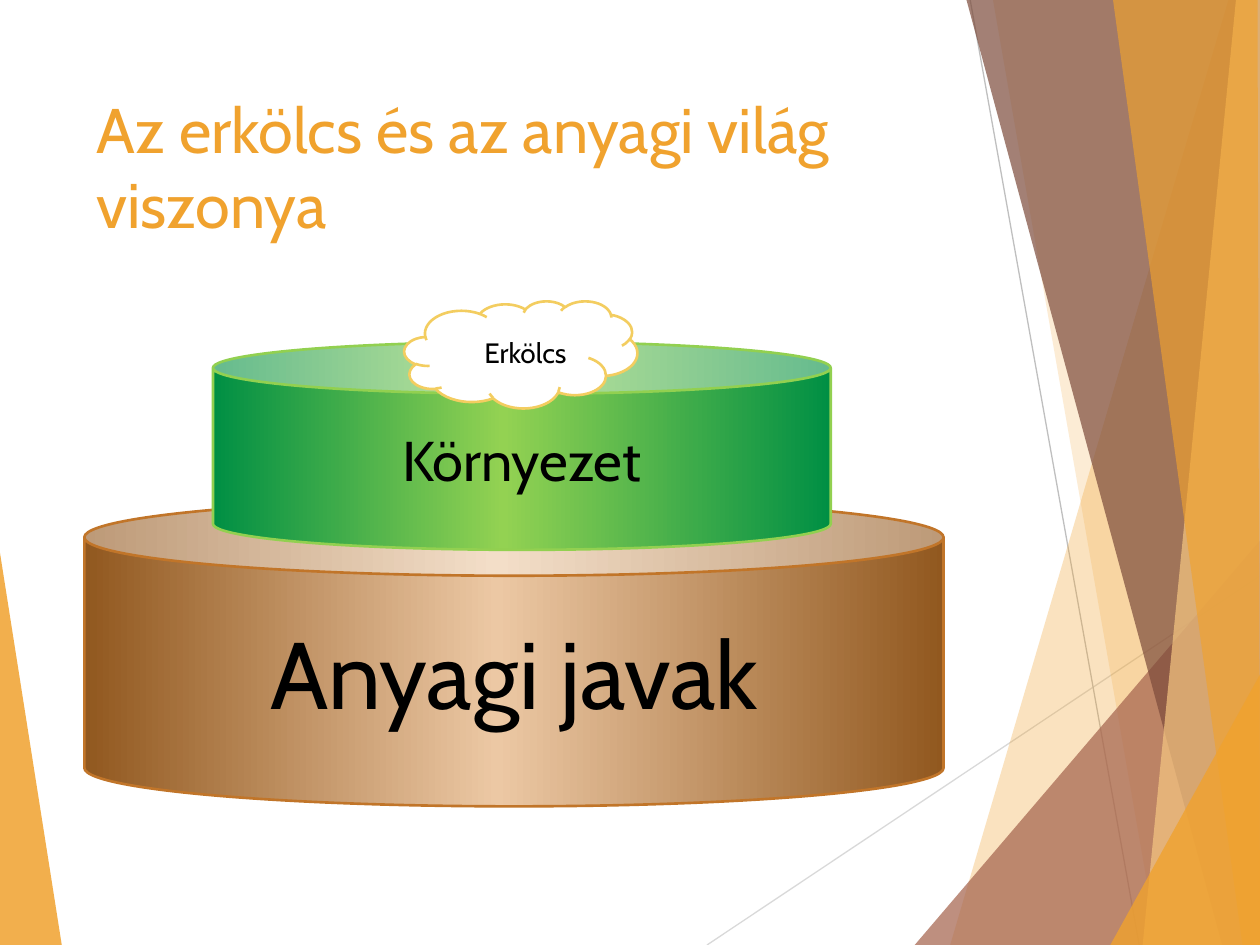
"""Build a slide on how morality relates to the material world."""
from copy import deepcopy

from lxml import etree
from pptx import Presentation
from pptx.dml.color import RGBColor
from pptx.enum import shapes, text
from pptx.oxml.ns import qn
from pptx.util import Pt

FONT = "Cabin"
BLACK = RGBColor(0x00, 0x00, 0x00)
WHITE = RGBColor(0xFF, 0xFF, 0xFF)
AMBER = RGBColor(0xF0, 0xA2, 0x2E)
SAND = RGBColor(0xF6, 0xC7, 0x82)
RUST = RGBColor(0xA5, 0x64, 0x4E)
UMBER = RGBColor(0x7C, 0x4B, 0x3B)
PALE_GREY = RGBColor(0xD9, 0xD9, 0xD9)
GREY = RGBColor(0xBF, 0xBF, 0xBF)
BROWN = RGBColor(0x91, 0x58, 0x1F)
TAN = RGBColor(0xEC, 0xC8, 0xA4)
COPPER = RGBColor(0xC1, 0x75, 0x29)
GREEN = RGBColor(0x00, 0x8F, 0x44)
LIME = RGBColor(0x93, 0xD2, 0x52)
LEAF = RGBColor(0x92, 0xD0, 0x50)
YELLOW = RGBColor(0xF3, 0xCD, 0x60)
WIDTH, HEIGHT = 720, 540


def write(box, words, size, color=BLACK, align=text.PP_ALIGN.CENTER,
          anchor=text.MSO_ANCHOR.MIDDLE, left=7.2):
    frame = box.text_frame
    frame.word_wrap = True
    frame.vertical_anchor = anchor
    frame.margin_left = Pt(left)
    para = frame.paragraphs[0]
    para.alignment = align
    span = para.add_run()
    span.text = words
    span.font.name = FONT
    span.font.size = Pt(size)
    span.font.color.rgb = color


deck = Presentation()
deck.slide_width, deck.slide_height = Pt(WIDTH), Pt(HEIGHT)
page = deck.slides.add_slide(deck.slide_layouts[6])

rays = [
    ((404, HEIGHT), (WIDTH, 329), PALE_GREY),
    ((554.4, 0), (651, HEIGHT), GREY),
]
facets = [
    (AMBER, 85, [(0, 316), (35.3, HEIGHT), (0, HEIGHT)]),
    (AMBER, 30, [(702, 0), (543, HEIGHT), (WIDTH, HEIGHT), (WIDTH, 0)]),
    (AMBER, 20, [(567.4, 0), (661.7, HEIGHT), (WIDTH, HEIGHT), (WIDTH, 0)]),
    (RUST, 72, [(522.7, HEIGHT), (WIDTH, 309), (WIDTH, HEIGHT)]),
    (UMBER, 70, [(552.3, 0), (698.4, HEIGHT), (WIDTH, HEIGHT), (WIDTH, 0)]),
    (SAND, 70, [(706.3, 0), (653, HEIGHT), (WIDTH, HEIGHT), (WIDTH, 0)]),
    (AMBER, 65, [(636, 0), (710, HEIGHT), (WIDTH, HEIGHT), (718.6, 0)]),
    (AMBER, 80, [(634.5, HEIGHT), (WIDTH, 385.5), (WIDTH, HEIGHT)]),
]
for index, (color, opacity, corners) in enumerate(facets):
    points = [(Pt(x), Pt(y)) for x, y in corners]
    builder = page.shapes.build_freeform(*points[0], scale=1.0)
    builder.add_line_segments(points[1:], close=True)
    facet = builder.convert_to_shape()
    facet.shadow.inherit = False
    facet.line.fill.background()
    facet.fill.solid()
    facet.fill.fore_color.rgb = color
    tint = facet.fill._xPr.find(".//" + qn("a:srgbClr"))
    etree.SubElement(tint, qn("a:alpha"), val=str(opacity * 1000))
    if index == 0:
        for start, end, shade in rays:
            ray = page.shapes.add_connector(
                shapes.MSO_CONNECTOR.STRAIGHT, *map(Pt, start + end))
            ray.line.color.rgb = shade
            ray.line.width = Pt(0.75)
            etree.SubElement(ray._element.spPr, qn("a:effectLst"))

title = page.shapes.add_textbox(Pt(48), Pt(48), Pt(500), Pt(104))
write(title, "Az erkölcs és az anyagi világ viszonya", 36, color=AMBER,
      align=text.PP_ALIGN.LEFT, anchor=text.MSO_ANCHOR.TOP)

tiers = [
    ("Anyagi javak", 54, (48.2, 285.1, 491, 175.7), BROWN, TAN, 48, COPPER),
    ("Környezet", 32, (121.7, 195.4, 353, 118.8), GREEN, LIME, 47, LEAF),
]
for words, size, place, edge, middle, peak, outline in tiers:
    tier = page.shapes.add_shape(shapes.MSO_SHAPE.CAN, *map(Pt, place))
    tier.shadow.inherit = False
    tier.line.color.rgb = outline
    tier.line.width = Pt(1.5)
    tier.fill.gradient()
    tier.fill.gradient_angle = 0
    first = tier.fill._xPr.find(".//" + qn("a:gs"))
    first.addnext(deepcopy(first))
    stops = zip(tier.fill.gradient_stops, (0, peak, 100), (edge, middle, edge))
    for stop, percent, color in stops:
        stop.position = percent / 100
        stop.color.rgb = color
    write(tier, words, size)

cloud = page.shapes.add_shape(
    shapes.MSO_SHAPE.CLOUD, Pt(231), Pt(172), Pt(133.2), Pt(61.2))
cloud.shadow.inherit = False
cloud.fill.solid()
cloud.fill.fore_color.rgb = WHITE
cloud.line.color.rgb = YELLOW
cloud.line.width = Pt(1.5)
write(cloud, "Erkölcs", 16, left=22)

deck.save("out.pptx")
